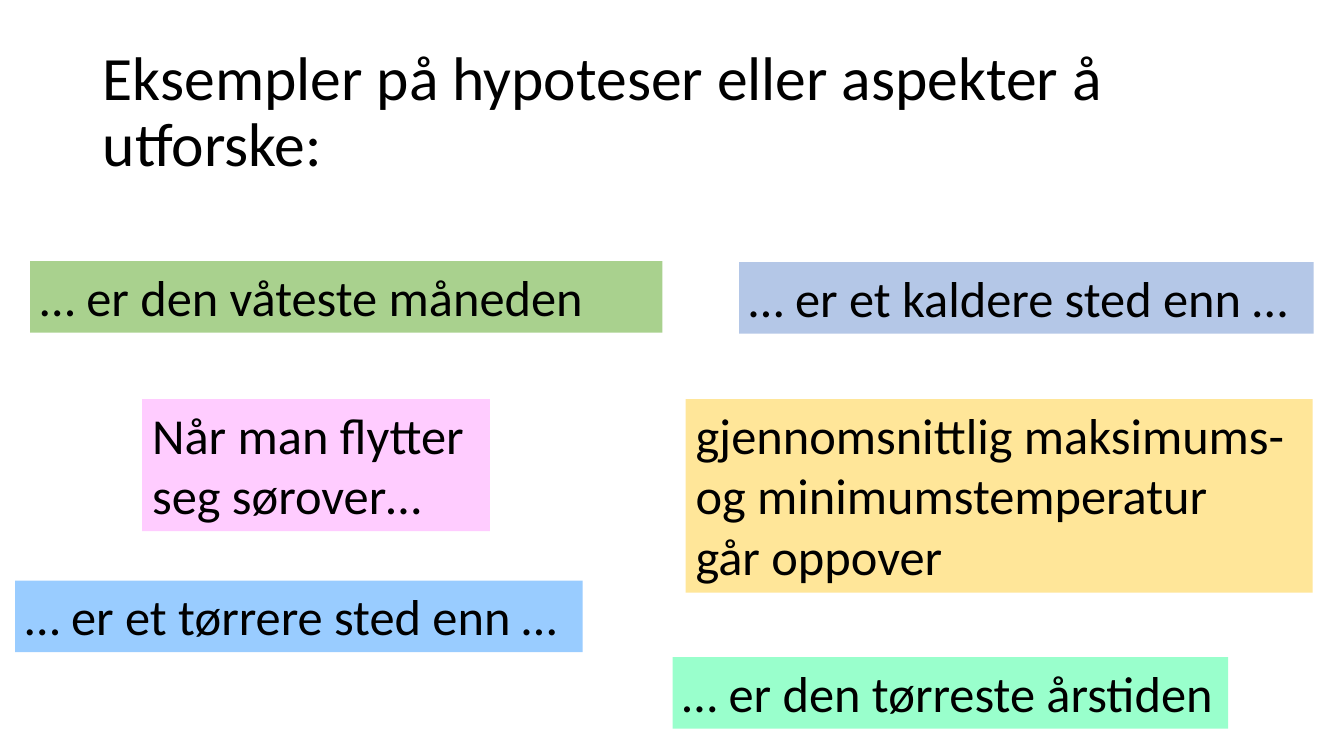
from pptx import Presentation
from pptx.dml.color import RGBColor
from pptx.enum.text import MSO_ANCHOR, PP_ALIGN
from pptx.util import Inches, Pt

FONT = "Calibri"
BLACK = RGBColor(0x00, 0x00, 0x00)
GREEN = RGBColor(0xA9, 0xD1, 0x8E)
PINK = RGBColor(0xFF, 0xCC, 0xFF)
YELLOW = RGBColor(0xFF, 0xE6, 0x99)
SKY = RGBColor(0x99, 0xCC, 0xFF)
MINT = RGBColor(0x99, 0xFF, 0xCC)
LAVENDER = RGBColor(0xB4, 0xC7, 0xE7)

HYPOTHESES = [
    (0.3, 2.59, 6.27, 0.71, GREEN, "… er den våteste måneden"),
    (1.41, 3.96, 3.45, 1.31, PINK, "Når man flytter\nseg sørover…"),
    (6.8, 3.96, 6.22, 1.92, YELLOW,
     "gjennomsnittlig maksimums-\nog minimumstemperatur\ngår oppover"),
    (0.15, 5.76, 5.63, 0.71, SKY, "… er et tørrere sted enn …"),
    (6.67, 6.52, 5.51, 0.71, MINT, "… er den tørreste årstiden"),
    (7.33, 2.6, 5.7, 0.71, LAVENDER, "… er et kaldere sted enn …"),
]


def format_paragraph(paragraph, size):
    paragraph.alignment = PP_ALIGN.LEFT
    paragraph.font.name = FONT
    paragraph.font.size = Pt(size)
    paragraph.font.color.rgb = BLACK


def set_heading(slide, text):
    heading = slide.shapes.title
    heading.left, heading.top = Inches(0.92), Inches(0.4)
    heading.width, heading.height = Inches(11.5), Inches(1.45)
    frame = heading.text_frame
    frame.text = text
    frame.vertical_anchor = MSO_ANCHOR.MIDDLE
    format_paragraph(frame.paragraphs[0], 44)
    frame.paragraphs[0].line_spacing = 0.9


def add_hypothesis(slide, left, top, width, height, color, text):
    card = slide.shapes.add_textbox(
        Inches(left), Inches(top), Inches(width), Inches(height))
    card.fill.solid()
    card.fill.fore_color.rgb = color
    frame = card.text_frame
    frame.word_wrap = True
    frame.text = text
    for paragraph in frame.paragraphs:
        format_paragraph(paragraph, 36)


def main():
    presentation = Presentation()
    presentation.slide_width = Inches(13.33)
    presentation.slide_height = Inches(7.5)
    slide = presentation.slides.add_slide(
        presentation.slide_layouts.get_by_name("Title Only"))
    set_heading(slide, "Eksempler på hypoteser eller aspekter å utforske:")
    for hypothesis in HYPOTHESES:
        add_hypothesis(slide, *hypothesis)
    presentation.save("out.pptx")


if __name__ == "__main__":
    main()
